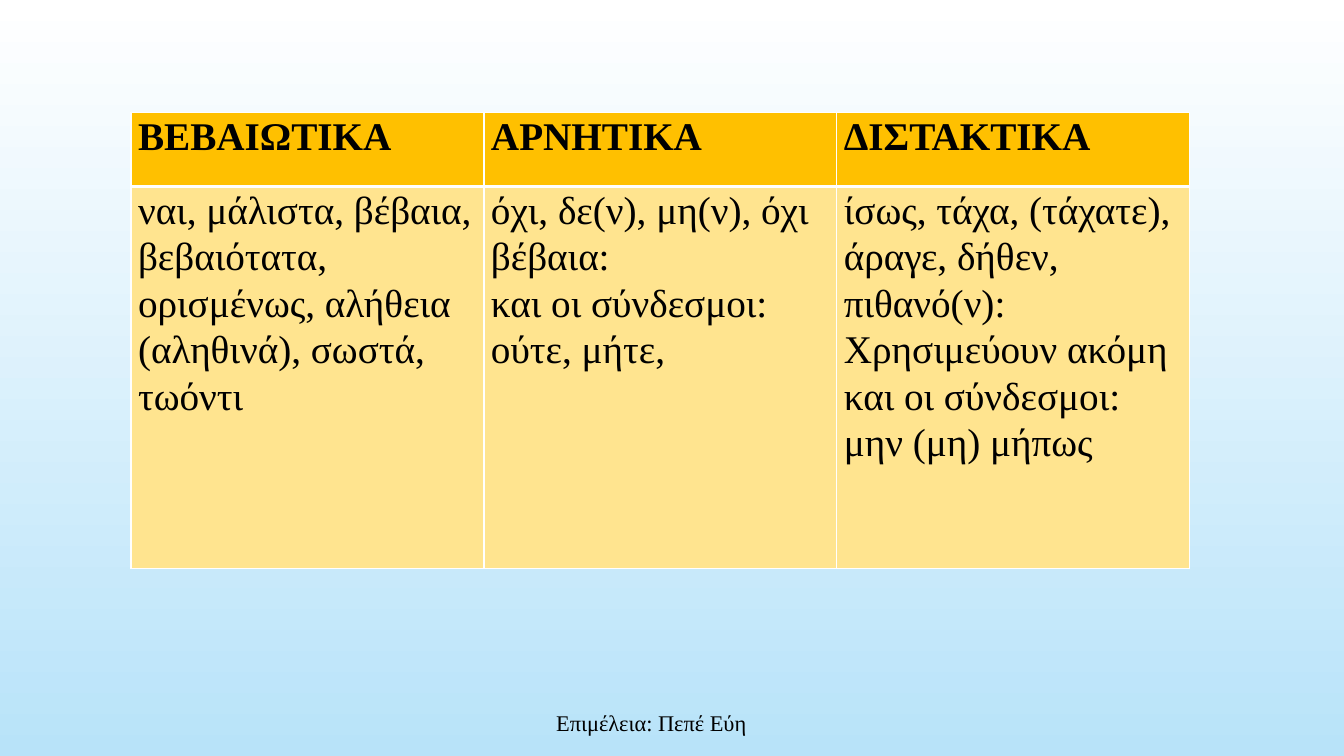
from lxml import etree
from pptx import Presentation
from pptx import util as u
from pptx.dml.color import RGBColor
from pptx.enum import text
from pptx.oxml.ns import qn

ADVERBS = {
    "ΒΕΒΑΙΩΤΙΚΑ": ["ναι, μάλιστα, βέβαια, βεβαιότατα, ορισμένως, αλήθεια (αληθινά), σωστά, τωόντι"],
    "ΑΡΝΗΤΙΚΑ": ["όχι, δε(ν), μη(ν), όχι βέβαια:", "και οι σύνδεσμοι: ούτε, μήτε,"],
    "ΔΙΣΤΑΚΤΙΚΑ": ["ίσως, τάχα, (τάχατε), άραγε, δήθεν, πιθανό(ν): "
                   "Χρησιμεύουν ακόμη και οι σύνδεσμοι: μην (μη) μήπως"],
}
CREDIT = "Επιμέλεια: Πεπέ Εύη"
FONT = "Times New Roman"
SKY = ["FFFFFF", "B8E3F9"]
HEADER_FILL, BODY_FILL, BORDER, INK = "FFC000", "FFE48F", "FFFFFF", "000000"
COLUMN_WIDTH = 3.5
ROW_HEIGHTS = [0.73, 3.79]


def rgb(color):
    return RGBColor.from_string(color)


def set_font(paragraph, size, bold=False):
    font = paragraph.font
    font.name, font.size, font.bold = FONT, u.Pt(size), bold
    font.color.rgb = rgb(INK)


def add_borders(cell, bottom):
    """Draw 1 pt borders, with the given width in points at the bottom."""
    widths = {"a:lnL": 1, "a:lnR": 1, "a:lnT": 1, "a:lnB": bottom}
    properties = cell._tc.get_or_add_tcPr()
    for position, (side, width) in enumerate(widths.items()):
        line = etree.Element(qn(side), w=str(u.Pt(width)))
        fill = etree.SubElement(line, qn("a:solidFill"))
        etree.SubElement(fill, qn("a:srgbClr"), val=BORDER)
        properties.insert(position, line)


def fill_cell(cell, lines, fill, bold, bottom):
    cell.margin_left = cell.margin_right = u.Inches(0.07)
    cell.margin_top = cell.margin_bottom = 0
    cell.fill.solid()
    cell.fill.fore_color.rgb = rgb(fill)
    cell.text = "\n".join(lines)
    for paragraph in cell.text_frame.paragraphs:
        paragraph.line_spacing = 1.07
        set_font(paragraph, 28, bold)
    add_borders(cell, bottom)


def add_adverbs(slide):
    table = slide.shapes.add_table(
        len(ROW_HEIGHTS), len(ADVERBS), u.Inches(1.3), u.Inches(1.12),
        u.Inches(COLUMN_WIDTH * len(ADVERBS)), u.Inches(sum(ROW_HEIGHTS))).table
    for row, height in zip(table.rows, ROW_HEIGHTS):
        row.height = u.Inches(height)
    for column, (kind, words) in enumerate(ADVERBS.items()):
        fill_cell(table.cell(0, column), [kind], HEADER_FILL, True, 3)
        fill_cell(table.cell(1, column), words, BODY_FILL, False, 1)


def add_credit(slide):
    credit = slide.shapes.add_textbox(
        u.Inches(2.81), u.Inches(6.97), u.Inches(7.3), u.Inches(0.4)).text_frame
    credit.word_wrap = True
    credit.vertical_anchor = text.MSO_ANCHOR.MIDDLE
    credit.text = CREDIT
    credit.paragraphs[0].alignment = text.PP_ALIGN.CENTER
    set_font(credit.paragraphs[0], 16)


def paint_background(slide):
    sky = slide.background.fill
    sky.gradient()
    sky.gradient_angle = 270
    for stop, color in zip(sky.gradient_stops, SKY):
        stop.color.rgb = rgb(color)


def main():
    deck = Presentation()
    deck.slide_width, deck.slide_height = u.Inches(13.33), u.Inches(7.5)
    slide = deck.slides.add_slide(deck.slide_layouts[6])
    paint_background(slide)
    add_credit(slide)
    add_adverbs(slide)
    deck.save("out.pptx")


if __name__ == "__main__":
    main()
